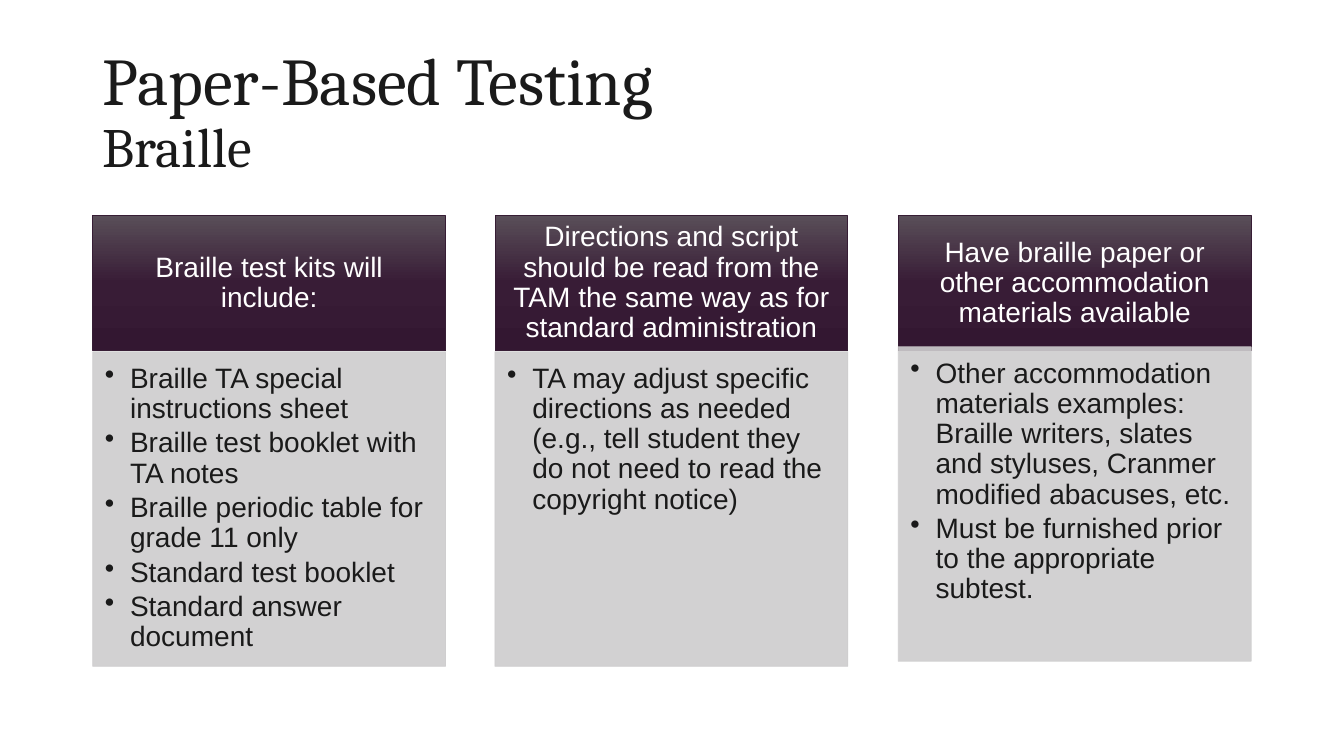
from dataclasses import dataclass

from lxml.etree import SubElement
from pptx import Presentation
from pptx.dml.color import RGBColor
from pptx.enum.shapes import MSO_SHAPE as Shape
from pptx.enum.text import MSO_ANCHOR as Anchor, MSO_AUTO_SIZE as AutoSize, PP_ALIGN as Align
from pptx.oxml.ns import qn
from pptx.util import Emu, Pt

PX = 9144  # EMU per px, 100 px to the inch


@dataclass(frozen=True)
class Theme:
    heading_font: str = "Cambria"
    body_font: str = "Arial"
    ink: str = "1A1A1A"
    white: str = "FFFFFF"
    panel: str = "CECDCE"
    panel_opacity: int = 90
    header_line: str = "371D35"
    header_stops: tuple[tuple[int, str], ...] = ((0, "594E58"), (50, "381C36"), (100, "331731"))
    title_size: float = 47.7
    subtitle_size: float = 39.6
    text_size: float = 20
    line_width: float = 0.5
    line_spacing: float = 0.9
    bullet_gap: float = 3


@dataclass(frozen=True)
class Box:
    left: int
    top: int
    width: int
    height: int


@dataclass(frozen=True)
class Card:
    heading: str
    bullets: tuple[str, ...]
    body_top: int = 349


THEME = Theme()
CARDS_LEFT, CARDS_WIDTH, CARD_WIDTH = 92, 1149, 350
HEADER_TOP, HEADER_HEIGHT, BODY_HEIGHT = 214, 134, 312
BULLET_INDENT = 25

CARDS = (
    Card("Braille test kits will include:", (
        "Braille TA special instructions sheet",
        "Braille test booklet with TA notes",
        "Braille periodic table for grade 11 only",
        "Standard test booklet",
        "Standard answer document",
    )),
    Card("Directions and script should be read from the TAM the same way "
         "as for standard administration", (
             "TA may adjust specific directions as needed (e.g., tell student "
             "they do not need to read the copyright notice)",
         )),
    Card("Have braille paper or other accommodation materials available", (
        "Other accommodation materials examples: Braille writers, slates and "
        "styluses, Cranmer modified abacuses, etc.",
        "Must be furnished prior to the appropriate subtest.",
    ), body_top=344),
)


def px(value: int) -> Emu:
    return Emu(value * PX)


def place(sp, box: Box) -> None:
    sp.left, sp.top = px(box.left), px(box.top)
    sp.width, sp.height = px(box.width), px(box.height)


def add_run(p, text: str, font: str, size: float, color: str) -> None:
    r = p.add_run()
    r.text = text
    r.font.name, r.font.size = font, Pt(size)
    r.font.color.rgb = RGBColor.from_string(color)


def add_rect(slide, box: Box, line: str, insets: tuple[int, int, int, int], anchor: Anchor):
    sp = slide.shapes.add_shape(Shape.RECTANGLE, 0, 0, 0, 0)
    place(sp, box)
    sp.shadow.inherit = False
    sp.line.color.rgb = RGBColor.from_string(line)
    sp.line.width = Pt(THEME.line_width)
    tf = sp.text_frame
    tf.word_wrap, tf.vertical_anchor = True, anchor
    tf.margin_left, tf.margin_top, tf.margin_right, tf.margin_bottom = map(px, insets)
    return sp


def add_title(slide, title: str, subtitle: str) -> None:
    sp = slide.shapes.title
    place(sp, Box(92, 40, 1150, 145))
    tf = sp.text_frame
    tf.word_wrap, tf.auto_size, tf.vertical_anchor = True, AutoSize.NONE, Anchor.MIDDLE
    p = tf.paragraphs[0]
    p.alignment, p.line_spacing = Align.LEFT, THEME.line_spacing
    add_run(p, title, THEME.heading_font, THEME.title_size, THEME.ink)
    p.add_line_break()
    add_run(p, subtitle, THEME.heading_font, THEME.subtitle_size, THEME.ink)


def add_header(slide, left: int, text: str) -> None:
    box = Box(left, HEADER_TOP, CARD_WIDTH, HEADER_HEIGHT)
    sp = add_rect(slide, box, THEME.header_line, (16, 9, 16, 9), Anchor.MIDDLE)
    # Three-stop gradient from top to bottom
    sp.fill.gradient()
    sp.fill.gradient_angle = 270
    stops = sp._element.spPr.find(qn("a:gradFill")).find(qn("a:gsLst"))
    for stop in list(stops):
        stops.remove(stop)
    for percent, color in THEME.header_stops:
        stop = SubElement(stops, qn("a:gs"), pos=str(percent * 1000))
        SubElement(stop, qn("a:srgbClr"), val=color)
    p = sp.text_frame.paragraphs[0]
    p.alignment, p.line_spacing = Align.CENTER, THEME.line_spacing
    add_run(p, text, THEME.body_font, THEME.text_size, THEME.white)


def add_body(slide, left: int, top: int, bullets: tuple[str, ...]) -> None:
    box = Box(left, top, CARD_WIDTH, BODY_HEIGHT)
    sp = add_rect(slide, box, THEME.panel, (12, 12, 16, 17), Anchor.TOP)
    sp.fill.solid()
    sp.fill.fore_color.rgb = RGBColor.from_string(THEME.panel)
    # Same opacity for fill and line
    for color in sp._element.spPr.iter(qn("a:srgbClr")):
        SubElement(color, qn("a:alpha"), val=str(THEME.panel_opacity * 1000))
    tf = sp.text_frame
    for i, text in enumerate(bullets):
        p = tf.add_paragraph() if i else tf.paragraphs[0]
        pPr = p._p.get_or_add_pPr()
        pPr.set("marL", str(px(BULLET_INDENT)))
        pPr.set("indent", str(px(-BULLET_INDENT)))
        SubElement(pPr, qn("a:buChar"), char="•")
        p.level, p.alignment = 1, Align.LEFT
        p.line_spacing, p.space_after = THEME.line_spacing, Pt(THEME.bullet_gap)
        add_run(p, text, THEME.body_font, THEME.text_size, THEME.ink)


def main() -> None:
    prs = Presentation()
    prs.slide_width, prs.slide_height = px(1333), px(750)
    slide = prs.slides.add_slide(prs.slide_layouts[5])
    add_title(slide, "Paper-Based Testing", "Braille")

    # Cards spread evenly across the content width
    for i, card in enumerate(CARDS):
        left = CARDS_LEFT + i * (CARDS_WIDTH - CARD_WIDTH) // (len(CARDS) - 1)
        add_header(slide, left, card.heading)
        add_body(slide, left, card.body_top, card.bullets)

    prs.save("out.pptx")


if __name__ == "__main__":
    main()
